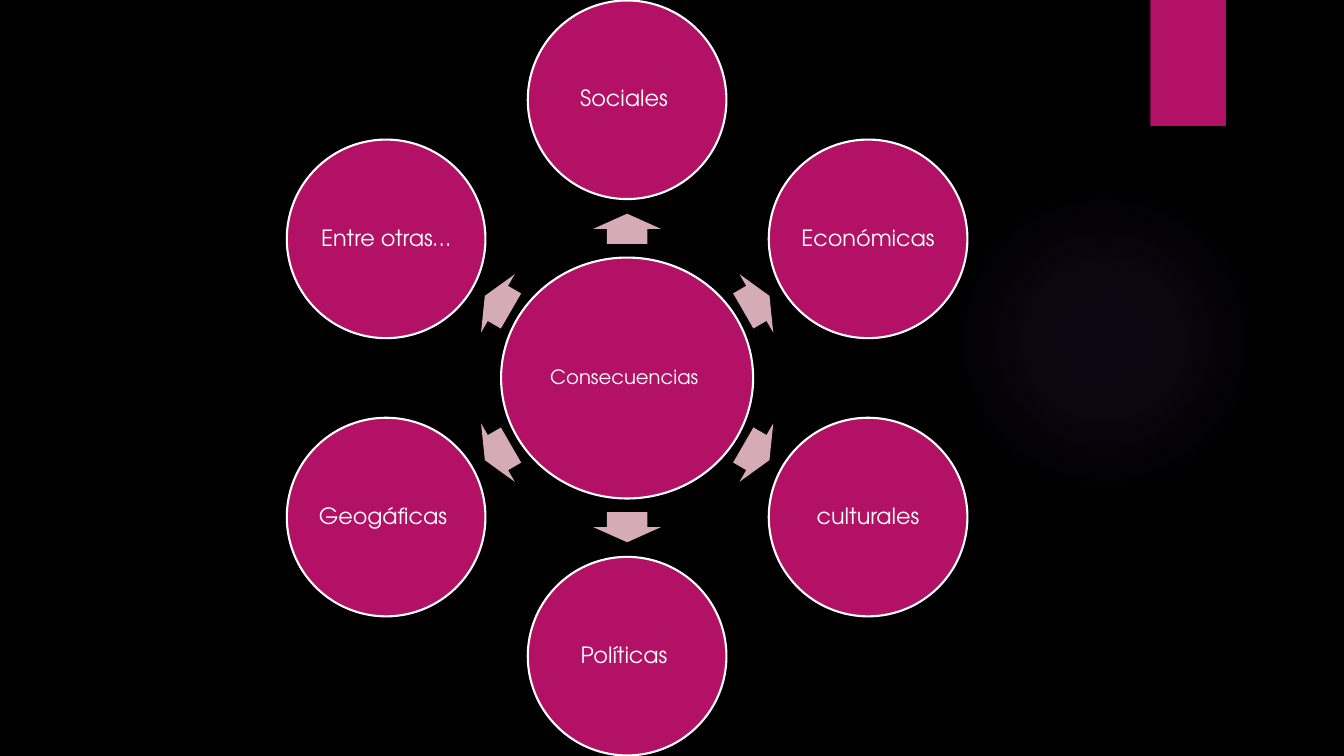
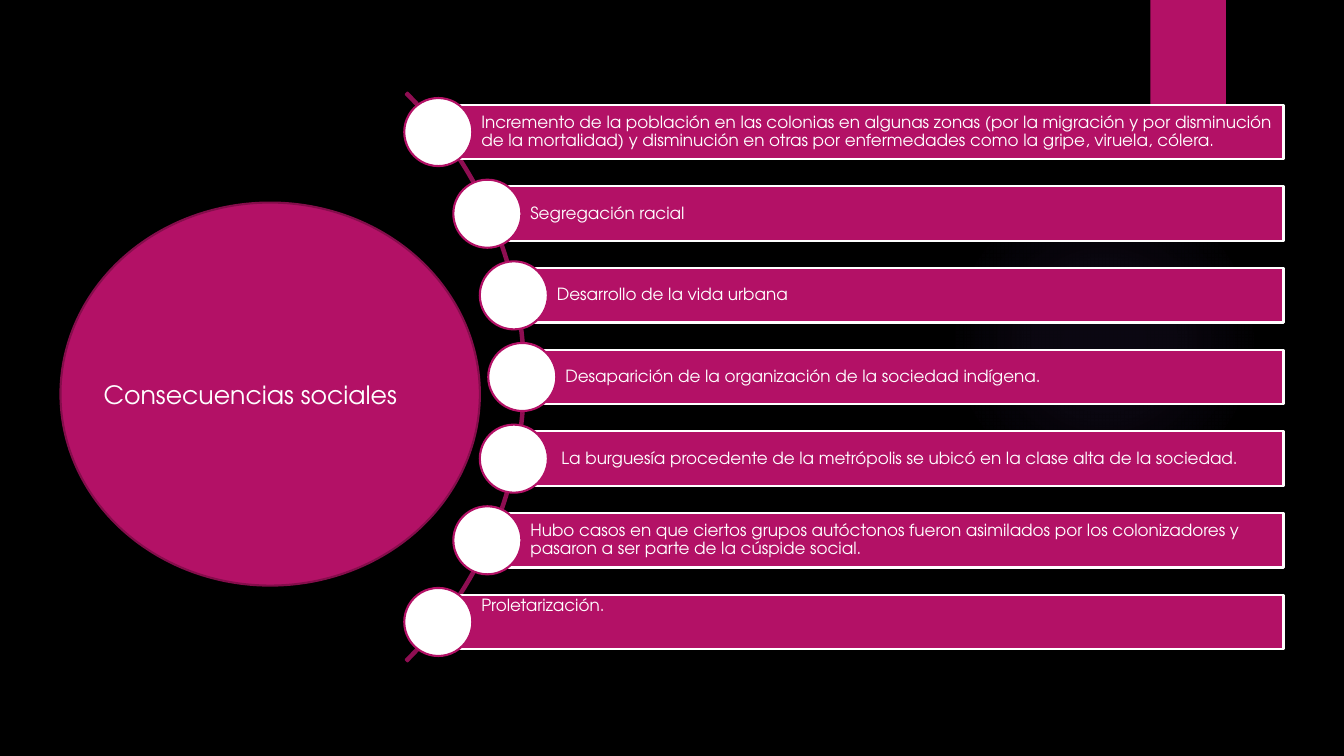
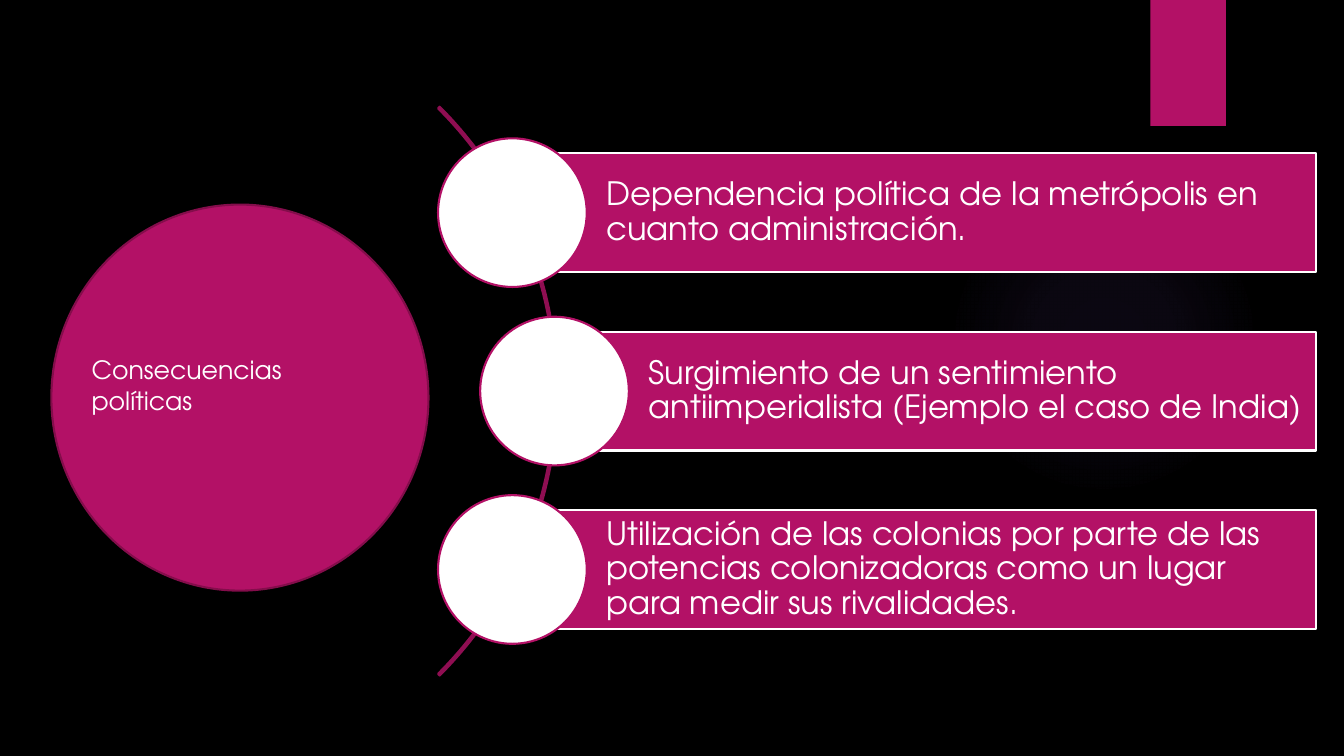
from math import cos, radians, sin, sqrt

from lxml import etree
from pptx import Presentation
from pptx.dml.color import RGBColor
from pptx.enum.shapes import MSO_SHAPE
from pptx.enum.text import MSO_ANCHOR, PP_ALIGN
from pptx.oxml import parse_xml
from pptx.util import Inches, Pt

OVAL, RECT = MSO_SHAPE.OVAL, MSO_SHAPE.RECTANGLE
ARROW, ARC = MSO_SHAPE.RIGHT_ARROW, MSO_SHAPE.BLOCK_ARC
TOP, MIDDLE = MSO_ANCHOR.TOP, MSO_ANCHOR.MIDDLE
LEFT, CENTER = PP_ALIGN.LEFT, PP_ALIGN.CENTER

# Shared style
FONT = "TeX Gyre Adventor"
BLACK, WHITE, MAGENTA = "000000", "FFFFFF", "B31166"
PINK, ARC_LINE, TOPIC_LINE, GLOW = "D6ABB8", "8F0E52", "840D4B", "9B6BF2"
LINE_WIDTH = 1.5
GLOW_STOPS = [(0, 7), (36, 6), (69, 0)]  # position and opacity, percent

# Content
HUB = "Consecuencias "
SPOKES = [  # text and angle, clockwise from the right
    ("Sociales ", -90),
    ("Económicas ", -30),
    ("culturales", 30),
    ("Políticas ", 90),
    ("Geogáficas ", 150),
    ("Entre otras…", 210),
]

CURVED_LISTS = [
    {
        "topic": "Consecuencias sociales",
        "topic_oval": (0.6, 2.01, 4.16, 3.8),
        "topic_label": (0.93, 3.71, 3.26, 0.4),
        "arc_center": (1.22, 3.74),
        "bar_height": 0.54,
        "bar_right": 12.73,
        "size": 12,
        "items": [
            ("Incremento de la población en las colonias en algunas zonas "
             "(por la migración y por disminución de la mortalidad) y "
             "disminución en otras por enfermedades como la gripe, viruela, "
             "cólera.", MIDDLE),
            ("Segregación racial", MIDDLE),
            ("Desarrollo de la vida urbana", MIDDLE),
            ("Desaparición de la organización de la sociedad indígena.", MIDDLE),
            (" La burguesía procedente de la metrópolis se ubicó en la clase "
             "alta de la sociedad.", MIDDLE),
            ("Hubo casos en que ciertos grupos autóctonos fueron asimilados "
             "por los colonizadores y pasaron a ser parte de la cúspide "
             "social.", MIDDLE),
            ("Proletarización.", TOP),
        ],
    },
    {
        "topic": "Consecuencias políticas",
        "topic_oval": (0.51, 2.03, 3.74, 3.83),
        "topic_label": (0.81, 3.47, 3.03, 0.71),
        "arc_center": (1.54, 3.88),
        "bar_height": 1.18,
        "bar_right": 13.05,
        "size": 23,
        "items": [
            ("Dependencia política de la metrópolis en cuanto "
             "administración.", MIDDLE),
            ("Surgimiento de un sentimiento antiimperialista (Ejemplo el caso "
             "de India)", MIDDLE),
            ("Utilización de las colonias por parte de las potencias "
             "colonizadoras como un lugar para medir sus rivalidades.", MIDDLE),
        ],
    },
]


def rgb(value):
    return RGBColor.from_string(value)


def add_block(slide, kind, box, fill=None, line=None):
    block = slide.shapes.add_shape(kind, *map(Inches, box))
    block.shadow.inherit = False
    if fill:
        block.fill.solid()
        block.fill.fore_color.rgb = rgb(fill)
    else:
        block.fill.background()
    if line:
        block.line.color.rgb = rgb(line)
        block.line.width = Pt(LINE_WIDTH)
    else:
        block.line.fill.background()
    return block


def centered(x, y, width, height):
    return x - width / 2, y - height / 2, width, height


def write(holder, text, size, align=LEFT, anchor=MIDDLE, insets=None, spacing=0.9):
    frame = holder.text_frame
    frame.word_wrap = True
    frame.vertical_anchor = anchor
    if insets:
        (frame.margin_left, frame.margin_top,
         frame.margin_right, frame.margin_bottom) = map(Inches, insets)
    frame.text = text
    paragraph = frame.paragraphs[0]
    paragraph.alignment = align
    paragraph.line_spacing = spacing
    font = paragraph.runs[0].font
    font.name, font.size, font.color.rgb = FONT, Pt(size), rgb(WHITE)


def add_glow(slide):
    glow = add_block(slide, OVAL, (9.41, 1.83, 3.08, 3.08))
    stops = "".join(
        f'<a:gs pos="{position * 1000}"><a:srgbClr val="{GLOW}">'
        f'<a:alpha val="{opacity * 1000}"/></a:srgbClr></a:gs>'
        for position, opacity in GLOW_STOPS)
    gradient = parse_xml(
        '<a:gradFill xmlns:a="http://schemas.openxmlformats.org/drawingml/2006/main"'
        f' rotWithShape="1"><a:gsLst>{stops}</a:gsLst><a:path path="circle">'
        '<a:fillToRect l="50000" t="50000" r="50000" b="50000"/>'
        '</a:path></a:gradFill>')
    properties = glow.fill._xPr
    for child in list(properties):
        if etree.QName(child).localname == "noFill":
            properties.replace(child, gradient)


def new_slide(prs):
    slide = prs.slides.add_slide(prs.slide_layouts[6])
    add_glow(slide)
    add_block(slide, RECT, (11.41, 0, 0.75, 1.25), MAGENTA)
    return slide


def build_hub(prs):
    slide = new_slide(prs)
    hub_x, hub_y = 6.22, 3.75
    spoke_radius, arrow_radius, spoke_size = 2.76, 1.48, 1.97
    insets = (0.02,) * 4

    hub = add_block(slide, OVAL, centered(hub_x, hub_y, 2.5, 2.39), MAGENTA, WHITE)
    write(hub, HUB, 14, CENTER, insets=insets)

    for text, angle in SPOKES:
        dx, dy = cos(radians(angle)), sin(radians(angle))
        arrow = add_block(slide, ARROW, centered(
            hub_x + arrow_radius * dx, hub_y + arrow_radius * dy, 0.3, 0.67), PINK)
        arrow.adjustments[0] = 0.6
        arrow.adjustments[1] = 0.5
        arrow.rotation = angle % 360
        spoke = add_block(slide, OVAL, centered(
            hub_x + spoke_radius * dx, hub_y + spoke_radius * dy,
            spoke_size, spoke_size), MAGENTA, WHITE)
        write(spoke, text, 16, CENTER, insets=insets)


def build_curved_list(prs, content):
    slide = new_slide(prs)
    arc_x, arc_y = content["arc_center"]
    height, right = content["bar_height"], content["bar_right"]
    dot_track = 3.96
    pitch, dot_size, pad = 1.5 * height, 1.25 * height, 0.05 * height

    arc = add_block(slide, ARC, centered(arc_x, arc_y, 7.98, 7.98), line=ARC_LINE)
    for index, value in enumerate((189, 27, 0.003)):
        arc.adjustments[index] = value

    # Each bar starts at the centre of its dot, which lies on the arc
    middle = (len(content["items"]) - 1) / 2
    for row, (text, anchor) in enumerate(content["items"]):
        offset = (row - middle) * pitch
        x, y = arc_x + sqrt(dot_track ** 2 - offset ** 2), arc_y + offset
        bar = add_block(slide, RECT, (x, y - height / 2, right - x, height),
                        MAGENTA, WHITE)
        write(bar, text, content["size"], anchor=anchor,
              insets=(0.79 * height, pad, pad, pad))
        add_block(slide, OVAL, centered(x, y, dot_size, dot_size), WHITE, MAGENTA)

    # Topic
    add_block(slide, OVAL, content["topic_oval"], MAGENTA, TOPIC_LINE)
    label = slide.shapes.add_textbox(*map(Inches, content["topic_label"]))
    write(label, content["topic"], 18, anchor=TOP, spacing=1.0)


def main():
    prs = Presentation()
    prs.slide_width, prs.slide_height = Inches(13.33), Inches(7.5)
    backdrop = prs.slide_master.background.fill
    backdrop.solid()
    backdrop.fore_color.rgb = rgb(BLACK)
    build_hub(prs)
    for content in CURVED_LISTS:
        build_curved_list(prs, content)
    prs.save("out.pptx")


if __name__ == "__main__":
    main()
